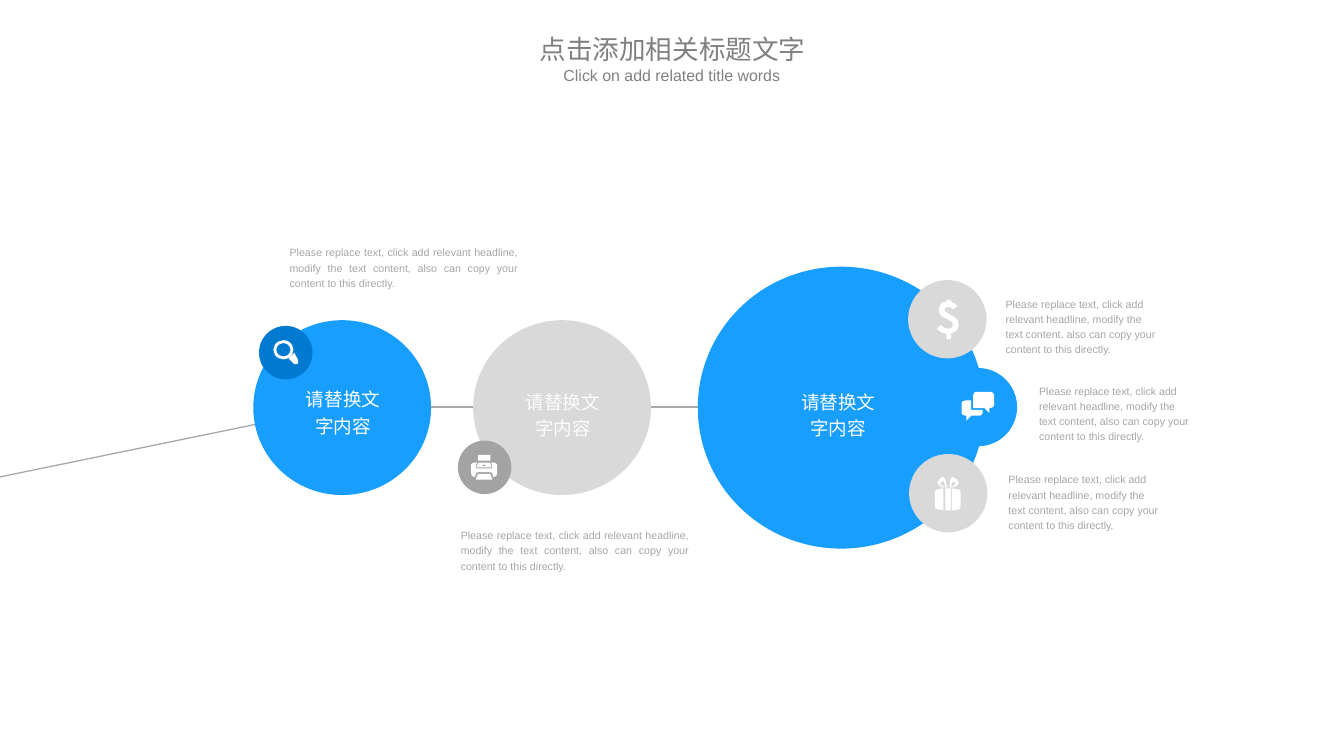
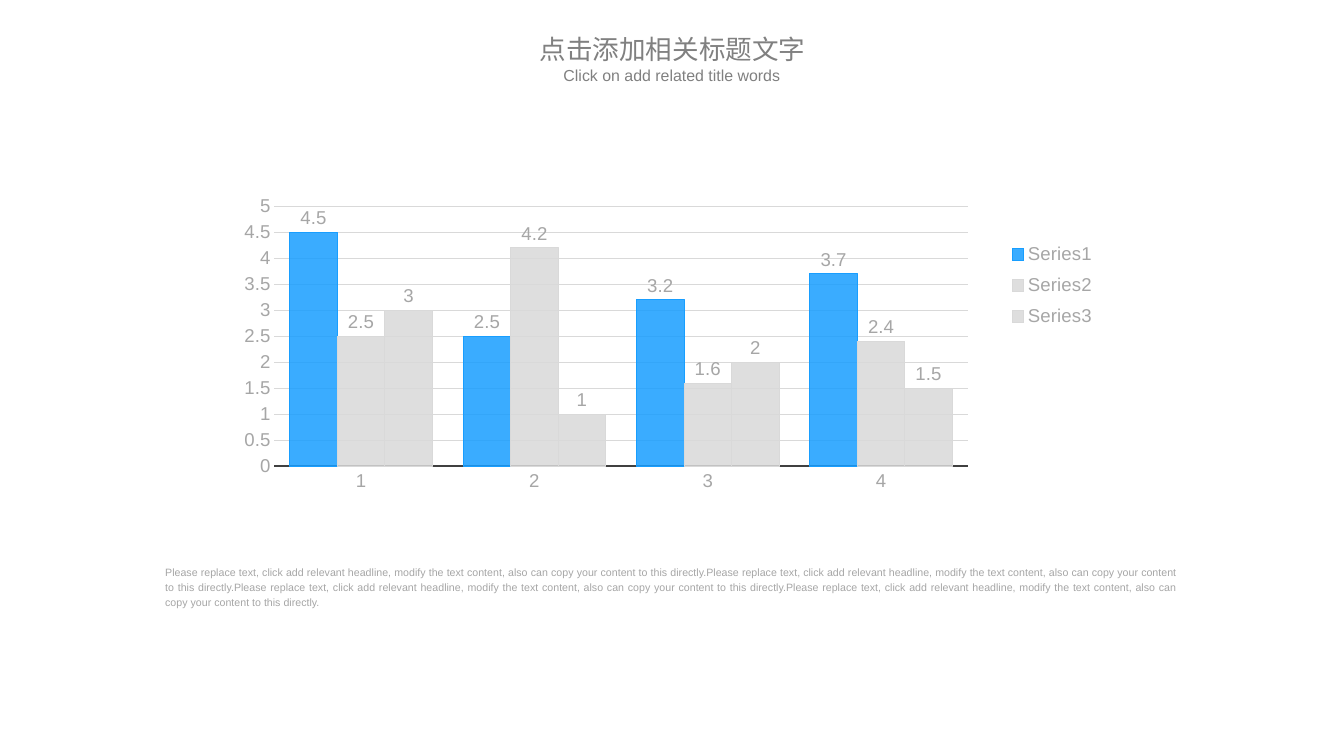
from lxml import etree
from pptx import Presentation
from pptx.chart.data import CategoryChartData
from pptx.dml.color import RGBColor
from pptx.enum.chart import XL_CHART_TYPE, XL_LABEL_POSITION, XL_LEGEND_POSITION, XL_TICK_MARK
from pptx.enum.shapes import MSO_CONNECTOR, MSO_SHAPE
from pptx.enum.text import MSO_ANCHOR, PP_ALIGN
from pptx.oxml import parse_xml
from pptx.oxml.ns import nsdecls, qn
from pptx.util import Pt

BLUE = RGBColor(0x18, 0x9E, 0xFF)
NAVY = RGBColor(0x00, 0x79, 0xD1)
PALE = RGBColor(0xD9, 0xD9, 0xD9)
MID = RGBColor(0xA3, 0xA3, 0xA3)
RULE = RGBColor(0xA6, 0xAA, 0xA9)
GRAY = RGBColor(0xA6, 0xA6, 0xA6)
HEAD = RGBColor(0x80, 0x80, 0x80)
DARK = RGBColor(0x40, 0x40, 0x40)
WHITE = RGBColor(0xFF, 0xFF, 0xFF)
SNOW = RGBColor(0xFC, 0xFC, 0xFC)

OVAL, RING = MSO_SHAPE.OVAL, MSO_SHAPE.DONUT
LINE = MSO_CONNECTOR.STRAIGHT
LEFT, MIDDLE, FULL = PP_ALIGN.LEFT, PP_ALIGN.CENTER, PP_ALIGN.JUSTIFY
TOP, HALF = MSO_ANCHOR.TOP, MSO_ANCHOR.MIDDLE
COLUMN = XL_CHART_TYPE.COLUMN_CLUSTERED
BOTTOM = XL_LEGEND_POSITION.BOTTOM
ABOVE = XL_LABEL_POSITION.OUTSIDE_END
NONE = XL_TICK_MARK.NONE

PX = 9144
SIZE = (1406, 791)
LATIN, ASIAN = "Arial", "Noto Sans CJK SC"

TITLE = "点击添加相关标题文字"
SUB = "Click on add related title words"
LABEL = "请替换文字内容"
BODY = ("Please replace text, click add relevant headline, modify the text "
        "content, also can copy your content to this directly.")

LINKS = [(594, 426, 893, 426), (361, 426, 588, 426), (0, 499, 355, 426)]
DISCS = [
    (730, 279, 300, 295, BLUE),
    (265, 335, 186, 183, BLUE),
    (495, 335, 186, 183, PALE),
    (271, 341, 56, 56, NAVY),
    (479, 461, 56, 56, MID),
    (950, 293, 82, 82, PALE),
    (982, 385, 82, 82, BLUE),
    (951, 475, 82, 82, PALE),
]
LABELS = [(829, 405), (541, 405), (311, 402)]
NOTES = [
    (1052, 309, 159, 63, LEFT, HALF),
    (1087, 400, 157, 63, LEFT, HALF),
    (1055, 493, 159, 63, LEFT, HALF),
    (303, 255, 239, 47, FULL, TOP),
    (482, 551, 239, 47, FULL, TOP),
]

LENS = (286, 356, 21, 20)
HANDLE = [[(305, 372), (308, 369), (312, 377), (312, 380), (310, 381), (308, 381), (302, 375)]]
PRINTER = [
    [(500, 476), (513, 476), (513, 482), (500, 482)],
    [(500, 496), (513, 496), (515, 501), (515, 502), (498, 502), (498, 501)],
    [(499, 487), (501, 484), (512, 484), (514, 487), (514, 489), (499, 489)],
    [(504, 487), (506, 486), (509, 487), (506, 488)],
    [(517, 484), (513, 484), (515, 486), (515, 490), (498, 490), (498, 486),
     (500, 484), (496, 484), (494, 485), (493, 486), (493, 496), (494, 498),
     (496, 499), (497, 499), (498, 495), (500, 494), (513, 494), (515, 495),
     (516, 499), (517, 499), (519, 498), (520, 496), (520, 486), (519, 485)],
]
DOLLAR = [[
    (1002, 320), (997, 324), (995, 322), (992, 321), (989, 322), (988, 324),
    (989, 326), (992, 328), (999, 332), (1002, 335), (1003, 340), (1002, 344),
    (999, 347), (995, 349), (995, 355), (990, 355), (990, 349), (985, 348),
    (980, 344), (984, 340), (988, 343), (992, 344), (996, 343), (997, 340),
    (996, 337), (993, 335), (985, 331), (983, 328), (982, 324), (984, 318),
    (987, 316), (990, 316), (990, 314), (995, 314), (995, 316), (998, 317)]]
CHAT = [
    [(1021, 410), (1036, 410), (1039, 411), (1040, 414), (1040, 424), (1039, 426),
     (1036, 427), (1035, 427), (1035, 432), (1030, 427), (1018, 427), (1018, 414),
     (1019, 411)],
    [(1016, 429), (1028, 429), (1028, 432), (1027, 434), (1025, 435), (1016, 435),
     (1011, 440), (1011, 435), (1010, 435), (1007, 434), (1006, 432), (1006, 422),
     (1007, 420), (1010, 419), (1016, 419)],
]
GIFT = [
    [(986, 499), (983, 501), (981, 504), (981, 506), (983, 508), (986, 510),
     (991, 510), (989, 502), (987, 499)],
    [(987, 503), (989, 509), (987, 509), (984, 507), (984, 505)],
    [(996, 499), (994, 502), (993, 510), (997, 510), (1001, 508), (1003, 506),
     (1002, 503), (999, 500)],
    [(997, 503), (1000, 506), (997, 509), (995, 509)],
    [(989, 511), (995, 511), (995, 534), (989, 534)],
    [(987, 511), (981, 512), (979, 513), (978, 515), (978, 530), (979, 532),
     (981, 533), (987, 534)],
    [(996, 511), (1003, 512), (1004, 513), (1005, 515), (1005, 530), (1004, 532),
     (1003, 533), (996, 534)],
]
ICONS = [HANDLE, PRINTER, DOLLAR, CHAT, GIFT]

CATS = ["1", "2", "3", "4"]
SERIES = [
    ("Series1", (4.5, 2.5, 3.2, 3.7), BLUE),
    ("Series2", (2.5, 4.2, 1.6, 2.4), PALE),
    ("Series3", (3, 1, 2, 1.5), PALE),
]
CHART = (236, 199, 930, 327)
PLOT = (0.055, 0.051, 0.78, 0.833)
KEY = (0.87, 0.14, 0.12, 0.33)


def emu(vals):
    return [v * PX for v in vals]


def paint(shape, color):
    shape.shadow.inherit = False
    shape.fill.solid()
    shape.fill.fore_color.rgb = color
    shape.line.fill.background()


def write(slide, box, text, size, color, align=MIDDLE, anchor=TOP,
          pad=(10, 5), space=1.2, latin=LATIN):
    frame = slide.shapes.add_textbox(*emu(box)).text_frame
    frame.word_wrap = True
    frame.vertical_anchor = anchor
    frame.margin_left = frame.margin_right = pad[0] * PX
    frame.margin_top = frame.margin_bottom = pad[1] * PX
    frame.text = text
    para = frame.paragraphs[0]
    para.alignment = align
    para.line_spacing = space
    run = para.runs[0]
    run.font.size = Pt(size)
    run.font.color.rgb = color
    run.font.name = latin
    east = etree.SubElement(run.font._element, qn("a:ea"))
    east.set("typeface", ASIAN)


def start(deck):
    slide = deck.slides.add_slide(deck.slide_layouts[6])
    write(slide, (536, 29, 335, 41), TITLE, 20, HEAD, space=1.0, latin=ASIAN)
    write(slide, (576, 64, 254, 41), SUB, 12, HEAD, space=1.0)
    return slide


def link(slide, ends):
    line = slide.shapes.add_connector(LINE, *emu(ends))
    line.line.color.rgb = RULE
    line.line.width = Pt(1)
    etree.SubElement(line._element.spPr, qn("a:effectLst"))


def draw(slide, loops):
    pen = slide.shapes.build_freeform(*loops[0][0], scale=PX)
    for num, loop in enumerate(loops):
        if num:
            pen.move_to(*loop[0])
        pen.add_line_segments(loop[1:], close=True)
    paint(pen.convert_to_shape(), WHITE)


def flow(deck):
    slide = start(deck)
    for ends in LINKS:
        link(slide, ends)
    for *box, color in DISCS:
        paint(slide.shapes.add_shape(OVAL, *emu(box)), color)
    lens = slide.shapes.add_shape(RING, *emu(LENS))
    lens.adjustments[0] = 0.15
    paint(lens, WHITE)
    for loops in ICONS:
        draw(slide, loops)
    for left, top in LABELS:
        write(slide, (left, top, 96, 54), LABEL, 14, SNOW, anchor=HALF, pad=(0, 0))
    for *box, align, anchor in NOTES:
        write(slide, box, BODY, 8, GRAY, align, anchor, pad=(0, 0))


def place(node, spot, rect, inner=False):
    for old in node.findall(qn("c:layout")):
        node.remove(old)
    parts = '<c:layoutTarget val="inner"/>' if inner else ""
    parts += '<c:xMode val="edge"/><c:yMode val="edge"/>'
    parts += "".join(f'<c:{k} val="{v}"/>' for k, v in zip("xywh", rect))
    node.insert(spot, parse_xml(
        f'<c:layout {nsdecls("c")}><c:manualLayout>{parts}</c:manualLayout></c:layout>'))


def style(font):
    font.size = Pt(14)
    font.name = LATIN
    font.color.rgb = GRAY


def bars(deck):
    slide = start(deck)
    data = CategoryChartData()
    data.categories = CATS
    for name, vals, _ in SERIES:
        data.add_series(name, vals)
    chart = slide.shapes.add_chart(COLUMN, *emu(CHART), data).chart
    style(chart.font)
    chart.has_title = False
    chart.has_legend = True
    key = chart.legend
    key.position = BOTTOM
    key.include_in_layout = False
    style(key.font)
    place(key._element, 1, KEY)
    place(chart._chartSpace.chart.plotArea, 0, PLOT, True)

    plot = chart.plots[0]
    plot.gap_width, plot.overlap = 65, 0
    plot.vary_by_categories = False
    for item, (_, _, color) in zip(plot.series, SERIES):
        fill = item.format.fill
        fill.solid()
        fill.fore_color.rgb = color
        tint = item._element.spPr.find(".//" + qn("a:srgbClr"))
        etree.SubElement(tint, qn("a:alpha")).set("val", "85000")
        item.format.line.color.rgb = color
        item.format.line.width = Pt(0.75)
        tags = item.data_labels
        tags.show_value = True
        tags.position = ABOVE
        style(tags.font)

    cat, val = chart.category_axis, chart.value_axis
    for axis in (cat, val):
        axis.major_tick_mark = axis.minor_tick_mark = NONE
        style(axis.tick_labels.font)
    cat.format.line.color.rgb = DARK
    cat.format.line.width = Pt(1.5)
    val.format.line.fill.background()
    val.minimum_scale, val.maximum_scale, val.major_unit = 0, 5, 0.5
    grid = val.major_gridlines.format.line
    grid.color.rgb = PALE
    grid.width = Pt(0.75)
    write(slide, (163, 584, 1080, 59), BODY * 4, 8, GRAY, FULL)


def main():
    deck = Presentation()
    deck.slide_width, deck.slide_height = emu(SIZE)
    flow(deck)
    bars(deck)
    deck.save("out.pptx")


if __name__ == "__main__":
    main()
